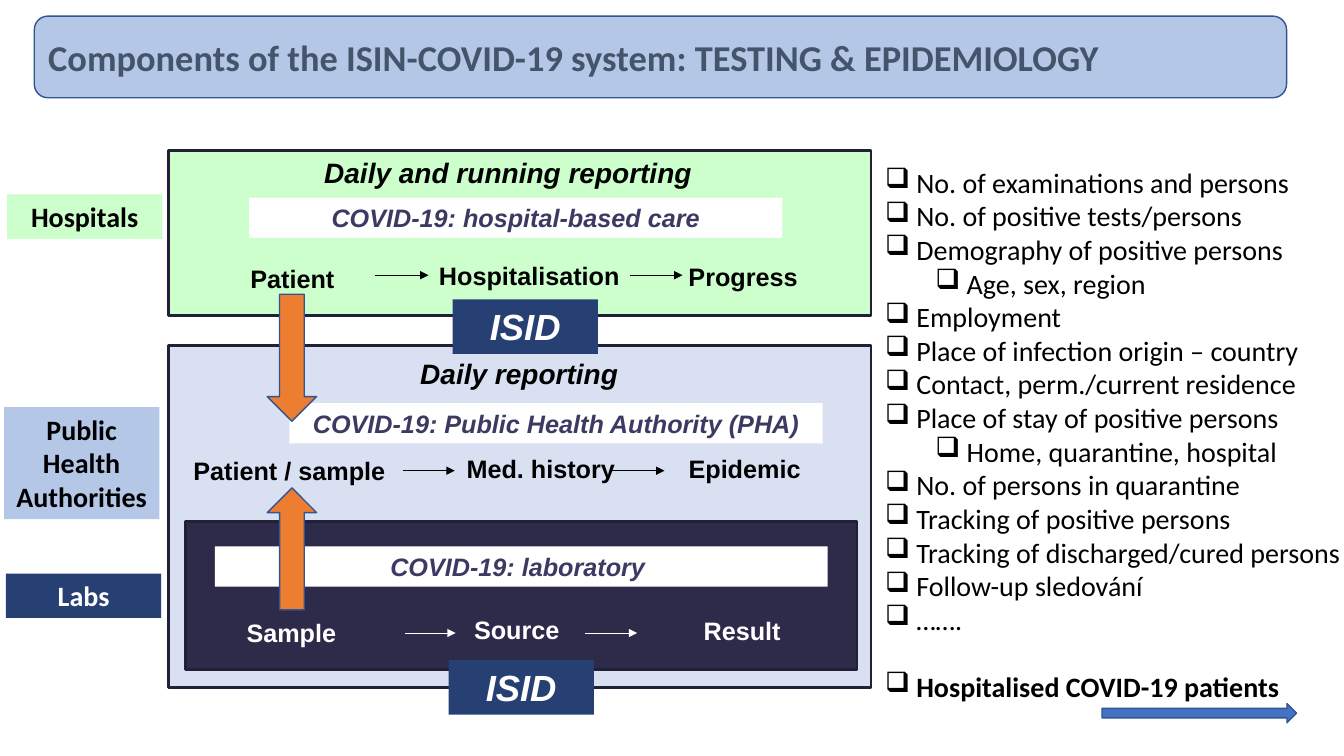
from dataclasses import dataclass

from lxml import etree
from pptx import Presentation
from pptx.dml.color import RGBColor
from pptx.enum.shapes import MSO_CONNECTOR, MSO_SHAPE
from pptx.enum.text import MSO_ANCHOR, PP_ALIGN
from pptx.oxml.ns import qn
from pptx.util import Emu, Pt

RECTANGLE = MSO_SHAPE.RECTANGLE
ROUNDED = MSO_SHAPE.ROUNDED_RECTANGLE
DOWN_ARROW = MSO_SHAPE.DOWN_ARROW
RIGHT_ARROW = MSO_SHAPE.RIGHT_ARROW
STRAIGHT = MSO_CONNECTOR.STRAIGHT
LEFT, CENTER = PP_ALIGN.LEFT, PP_ALIGN.CENTER
TOP, MIDDLE = MSO_ANCHOR.TOP, MSO_ANCHOR.MIDDLE
LEFT_SIDE, RIGHT_SIDE = 1, 3
EMU_PER_PX = 9144


@dataclass(frozen=True)
class Theme:
    """Colours, fonts and type sizes of the slide."""
    black: str = "000000"
    white: str = "FFFFFF"
    slate: str = "44546A"
    violet: str = "3C3A62"
    light_blue: str = "B4C7E7"
    pale_blue: str = "D8E0F2"
    blue: str = "4472C4"
    outline: str = "325491"
    navy: str = "274073"
    night: str = "2D2B49"
    frame: str = "212036"
    green: str = "CCFFCC"
    orange: str = "ED7D31"
    sans: str = "Calibri"
    diagram: str = "Arial"
    title: int = 26
    body: int = 20
    label: int = 18


def px(length):
    """Turn px into EMU."""
    return Emu(length * EMU_PER_PX)


def write(paragraph, text, *, size, font, color, bold=True, italic=False, align=CENTER):
    """Add formatted text to a paragraph."""
    paragraph.alignment = align
    run = paragraph.add_run()
    run.text = text
    run.font.size = Pt(size)
    run.font.name = font
    run.font.bold = bold
    run.font.italic = italic
    run.font.color.rgb = RGBColor.from_string(color)


class SlideBuilder:
    """Draws styled elements on one slide."""

    def __init__(self, slide, theme):
        """Keep the slide and its theme."""
        self.slide = slide
        self.theme = theme

    def shape(self, kind, box, fill, line=None, width=1, rotation=0):
        """Draw a filled preset shape."""
        shape = self.slide.shapes.add_shape(kind, *map(px, box))
        shape.shadow.inherit = False
        shape.rotation = rotation
        shape.fill.solid()
        shape.fill.fore_color.rgb = RGBColor.from_string(fill)
        if line:
            shape.line.color.rgb = RGBColor.from_string(line)
            shape.line.width = Pt(width)
        else:
            shape.line.fill.background()
        return shape

    def box(self, box, text, fill, kind=RECTANGLE, line=None, anchor=TOP, **style):
        """Draw a filled shape with text."""
        shape = self.shape(kind, box, fill, line)
        shape.text_frame.vertical_anchor = anchor
        write(shape.text_frame.paragraphs[0], text, **style)

    def panel(self, box, fill):
        """Draw a framed background panel."""
        self.shape(RECTANGLE, box, fill, self.theme.frame, 2)

    def tag(self, box, text, fill, color):
        """Draw the name of an institution."""
        self.box(box, text, fill, size=self.theme.body, font=self.theme.sans, color=color)

    def module(self, box, text):
        """Draw a white bar with a module name."""
        theme = self.theme
        self.box(box, text, theme.white, size=theme.label, font=theme.diagram,
                 color=theme.violet, italic=True)

    def register(self, left, top):
        """Draw an ISID badge."""
        theme = self.theme
        self.box((left, top, 144, 54), "ISID", theme.navy, size=theme.title,
                 font=theme.diagram, color=theme.white, italic=True)

    def label(self, box, text, **style):
        """Draw a wrapped text box."""
        label = self.slide.shapes.add_textbox(*map(px, box))
        label.text_frame.word_wrap = True
        write(label.text_frame.paragraphs[0], text, font=self.theme.diagram, **style)
        return label

    def heading(self, left, top, text):
        """Draw a panel heading."""
        self.label((left, top, 566, 44), text, size=self.theme.body,
                   color=self.theme.black, italic=True)

    def arrow(self, start, end, y, color, source=None, target=None):
        """Draw a thin horizontal arrow, joined where it meets a label."""
        arrow = self.slide.shapes.add_connector(STRAIGHT, px(start), px(y), px(end), px(y))
        if source:
            arrow.begin_connect(source, RIGHT_SIDE)
        if target:
            arrow.end_connect(target, LEFT_SIDE)
        arrow.line.color.rgb = RGBColor.from_string(color)
        arrow.line.width = Pt(0.5)
        properties = arrow.element.spPr
        etree.SubElement(properties.find(qn("a:ln")), qn("a:tailEnd"), type="triangle")
        etree.SubElement(properties, qn("a:effectLst"))

    def stages(self, color, labels, arrows):
        """Draw a row of stage labels and the arrows between them."""
        drawn = {None: None}
        for text, left, top, width in labels:
            drawn[text] = self.label((left, top, width, 40), text,
                                     size=self.theme.label, color=color)
        for start, y, source, target in arrows:
            self.arrow(start, start + 52, y, color, drawn[source], drawn[target])

    def flow(self, top, height, rotation=0):
        """Draw a vertical block arrow between panels."""
        self.shape(DOWN_ARROW, (265, top, 49, height), self.theme.orange,
                   self.theme.outline, rotation=rotation)

    def checklist(self, box, items):
        """Draw a list of (text, level, bold, space before) with box bullets."""
        frame = self.slide.shapes.add_textbox(*map(px, box)).text_frame
        frame.word_wrap = True
        for index, (text, level, bold, space) in enumerate(items):
            paragraph = frame.add_paragraph() if index else frame.paragraphs[0]
            write(paragraph, text, size=self.theme.body, font=self.theme.sans,
                  color=self.theme.black, bold=bold, align=LEFT)
            paragraph.level = level
            paragraph.space_before = Pt(space)
            properties = paragraph._p.get_or_add_pPr()
            properties.set("marL", str(px(31 + 50 * level)))
            properties.set("indent", str(px(-31)))
            etree.SubElement(properties, qn("a:buChar"), char="❑")


def main():
    """Build the slide and save it."""
    presentation = Presentation()
    presentation.slide_width, presentation.slide_height = px(1333), px(750)
    slide = presentation.slides.add_slide(presentation.slide_layouts[6])
    theme = Theme()
    builder = SlideBuilder(slide, theme)

    builder.box((34, 16, 1242, 81),
                "Components of the ISIN-COVID-19 system: TESTING & EPIDEMIOLOGY",
                theme.light_blue, ROUNDED, theme.outline, MIDDLE,
                size=theme.title, font=theme.sans, color=theme.slate, align=LEFT)

    builder.tag((6, 569, 154, 44), "Labs", theme.navy, theme.white)
    builder.panel((167, 343, 697, 339), theme.pale_blue)
    builder.panel((184, 517, 666, 147), theme.night)
    builder.module((213, 542, 608, 40), "COVID-19: laboratory ")
    builder.stages(theme.white,
                   [("Sample", 176, 608, 226), ("Result ", 620, 606, 239),
                    ("Source", 419, 605, 187)],
                   [(400, 628, "Sample", None), (580, 628, None, None)])

    builder.tag((4, 404, 154, 111), "Public Health Authorities",
                theme.light_blue, theme.black)
    builder.heading(232, 349, "Daily reporting")
    builder.module((287, 400, 529, 40), "COVID-19: Public Health Authority (PHA)")
    builder.stages(theme.black,
                   [("Patient / sample", 174, 447, 226), ("Epidemic", 619, 445, 239),
                    ("Med. history", 443, 445, 187)],
                   [(399, 467, "Patient / sample", None), (607, 467, None, None)])
    builder.flow(484, 121, rotation=180)
    builder.register(445, 655)

    builder.panel((167, 149, 697, 164), theme.green)
    builder.tag((7, 193, 154, 44), "Hospitals", theme.green, theme.black)
    builder.module((247, 196, 529, 40), "COVID-19: hospital-based care")
    builder.heading(221, 149, "Daily and running reporting")
    builder.stages(theme.black,
                   [("Patient", 177, 256, 226), ("Progress ", 621, 254, 239),
                    ("Hospitalisation", 425, 253, 200)],
                   [(372, 273, None, "Hospitalisation"), (625, 273, "Hospitalisation", None)])
    builder.register(449, 297)
    builder.flow(292, 126)

    builder.checklist((868, 159, 479, 549), [
        ("No. of examinations and persons", 0, False, 0),
        ("No. of positive tests/persons", 0, False, 0),
        ("Demography of positive persons", 0, False, 0),
        ("Age, sex, region", 1, False, 0),
        ("Employment", 0, False, 0),
        ("Place of infection origin – country", 0, False, 0),
        ("Contact, perm./current residence", 0, False, 0),
        ("Place of stay of positive persons", 0, False, 0),
        ("Home, quarantine, hospital", 1, False, 0),
        ("No. of persons in quarantine", 0, False, 0),
        ("Tracking of positive persons", 0, False, 0),
        ("Tracking of discharged/cured persons", 0, False, 0),
        ("Follow-up sledování", 0, False, 0),
        ("…….", 0, False, 0),
        ("Hospitalised COVID-19 patients", 0, True, 24),
    ])
    builder.shape(RIGHT_ARROW, (1093, 698, 193, 19), theme.blue, theme.outline)
    presentation.save("out.pptx")


if __name__ == "__main__":
    main()
